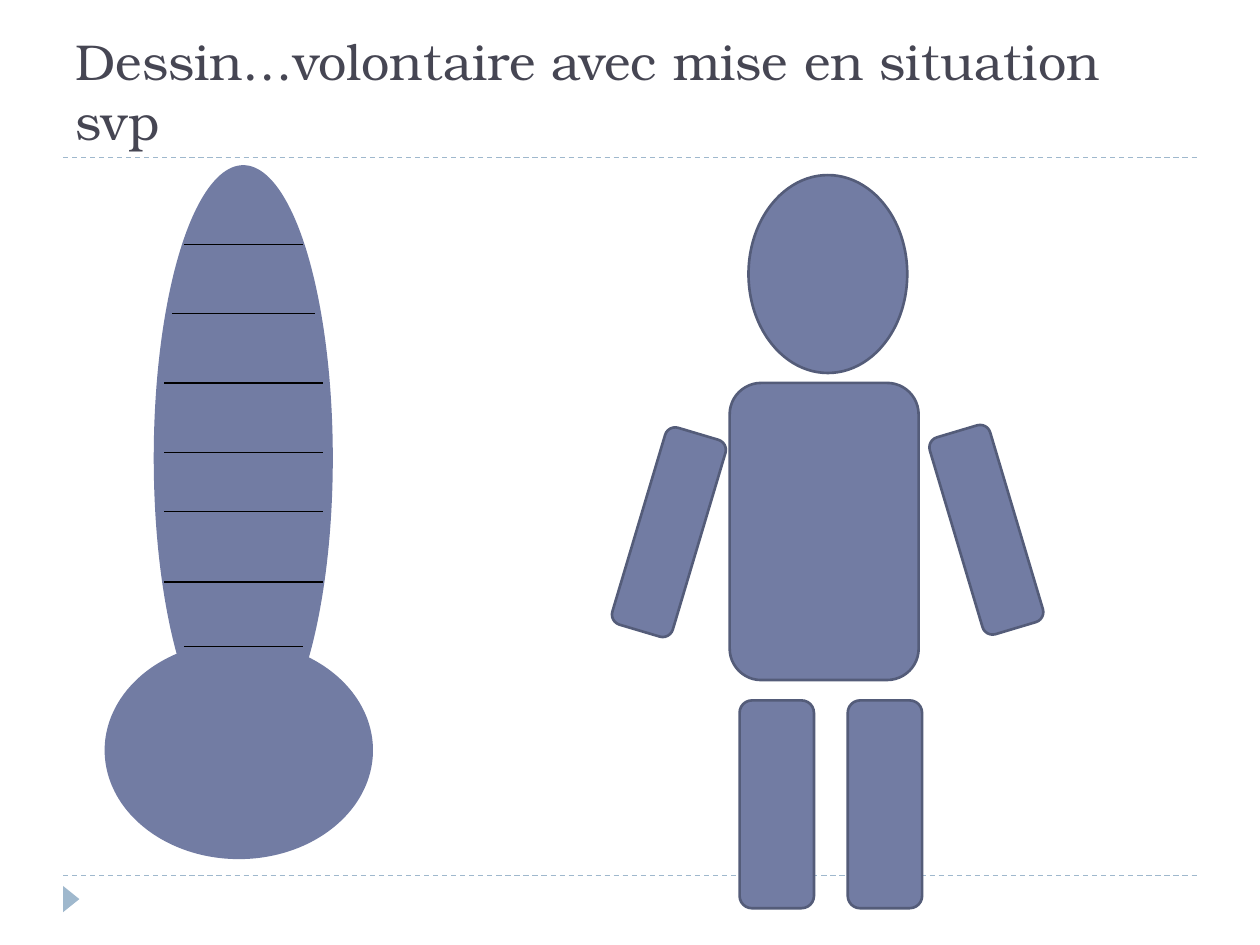
from lxml import etree
from pptx import Presentation
from pptx.dml.color import RGBColor
from pptx.enum import dml, shapes, text
from pptx.oxml import ns
from pptx.util import Cm, Pt

FONT = "TeX Gyre Bonum"
INK = RGBColor(0x46, 0x46, 0x53)
SLATE = RGBColor(0x72, 0x7C, 0xA3)
OUTLINE = RGBColor(0x54, 0x5C, 0x79)
ACCENT = RGBColor(0x9F, 0xB8, 0xCD)
BLACK = RGBColor(0, 0, 0)

OVAL = shapes.MSO_SHAPE.OVAL
ROUNDED = shapes.MSO_SHAPE.ROUNDED_RECTANGLE
TRIANGLE = shapes.MSO_SHAPE.ISOSCELES_TRIANGLE

TITLE = "Dessin…volontaire avec mise en situation svp"
TITLE_BOX = (1.27, 0.43, 22.86, 2.74)
RULE_LEFT, RULE_RIGHT = 1.27, 24.13
RULE_HEIGHTS = (17.65, 3.18)
MARKER_BOX = (1.17, 17.96, 0.53, 0.33)

# Left, top, width, height in cm
BASE_BOX = (2.11, 12.93, 5.41, 4.39)
SHAFT_BOX = (3.1, 3.33, 3.61, 11.81)
STRIPE_CENTRE = 4.91
STRIPES = [  # height on the slide, length
    (4.93, 2.4), (6.32, 2.87), (7.72, 3.2), (9.12, 3.2),
    (10.31, 3.2), (11.73, 3.2), (13.03, 2.4),
]

ARM_TILT = 16.6
BODY_PARTS = [  # outline, box, rotation
    (OVAL, (15.09, 3.53, 3.2, 3.99), 0),
    (ROUNDED, (14.71, 7.72, 3.81, 5.99), 0),
    (ROUNDED, (14.91, 14.12, 1.5, 4.19), 0),
    (ROUNDED, (17.09, 14.12, 1.5, 4.19), 0),
    (ROUNDED, (12.85, 8.66, 1.27, 4.14), ARM_TILT),
    (ROUNDED, (19.25, 8.61, 1.27, 4.14), -ARM_TILT),
]


def add_part(slide, kind, box, fill, outline=None, rotation=0):
    part = slide.shapes.add_shape(kind, *map(Cm, box))
    part.shadow.inherit = False
    part.fill.solid()
    part.fill.fore_color.rgb = fill
    if outline is None:
        part.line.fill.background()
    else:
        part.line.color.rgb = outline
        part.line.width = Pt(1.5)
    part.rotation = rotation


def add_horizontal(slide, left, right, height, color, dash=None):
    rule = slide.shapes.add_connector(
        shapes.MSO_CONNECTOR.STRAIGHT, Cm(left), Cm(height), Cm(right), Cm(height))
    rule.line.color.rgb = color
    rule.line.width = Pt(0.75)
    if dash is not None:
        rule.line.dash_style = dash
    etree.SubElement(rule._element.spPr, ns.qn("a:effectLst"))


def add_title(slide):
    title = slide.shapes.title
    title.left, title.top, title.width, title.height = map(Cm, TITLE_BOX)
    frame = title.text_frame
    frame.word_wrap = True
    frame.auto_size = text.MSO_AUTO_SIZE.NONE
    frame.vertical_anchor = text.MSO_ANCHOR.BOTTOM
    paragraph = frame.paragraphs[0]
    paragraph.alignment = text.PP_ALIGN.LEFT
    run = paragraph.add_run()
    run.text = TITLE
    run.font.name = FONT
    run.font.size = Pt(28.8)
    run.font.color.rgb = INK


def main():
    deck = Presentation()
    deck.slide_width, deck.slide_height = Cm(25.4), Cm(19.05)
    slide = deck.slides.add_slide(deck.slide_layouts.get_by_name("Title Only"))

    for height in RULE_HEIGHTS:
        add_horizontal(slide, RULE_LEFT, RULE_RIGHT, height, ACCENT,
                       dml.MSO_LINE.DASH)
    add_part(slide, TRIANGLE, MARKER_BOX, ACCENT, rotation=90)
    add_title(slide)

    for box in (BASE_BOX, SHAFT_BOX):
        add_part(slide, OVAL, box, SLATE)
    for height, length in STRIPES:
        add_horizontal(slide, STRIPE_CENTRE - length / 2,
                       STRIPE_CENTRE + length / 2, height, BLACK)

    for kind, box, rotation in BODY_PARTS:
        add_part(slide, kind, box, SLATE, OUTLINE, rotation)

    deck.save("out.pptx")


if __name__ == "__main__":
    main()
